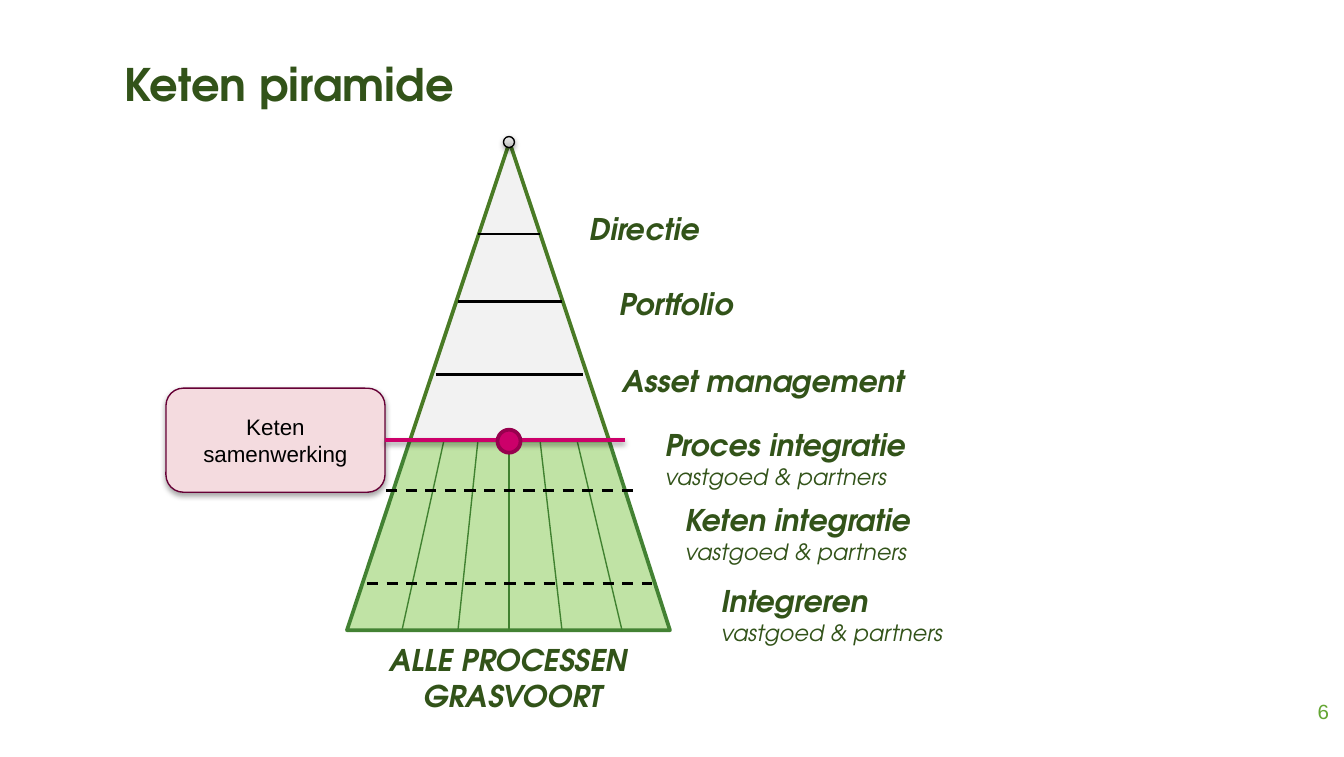
from lxml.etree import SubElement
from pptx import Presentation
from pptx.dml.color import RGBColor
from pptx.enum.dml import MSO_LINE
from pptx.enum.shapes import MSO_CONNECTOR, MSO_SHAPE
from pptx.enum.text import MSO_ANCHOR, MSO_AUTO_SIZE, PP_ALIGN
from pptx.oxml.ns import qn
from pptx.util import Inches, Pt

EMU_PER_PX = 914400 / 134.4
HEADING_FONT = "TeX Gyre Adventor"
BODY_FONT = "Arial"

BLACK = RGBColor(0x00, 0x00, 0x00)
DARK_GREEN = RGBColor(0x32, 0x53, 0x19)
NUMBER_GREEN = RGBColor(0x64, 0xA6, 0x33)
BASE_FILL = RGBColor(0xC0, 0xE3, 0xA5)
BASE_LINE = RGBColor(0x43, 0x82, 0x33)
TOP_FILL = RGBColor(0xF2, 0xF2, 0xF2)
TOP_LINE = RGBColor(0x4A, 0x7B, 0x26)
RIB_GREEN = RGBColor(0x40, 0x81, 0x30)
PINK = RGBColor(0xCC, 0x00, 0x6A)
DARK_PINK = RGBColor(0x97, 0x00, 0x4E)
CALLOUT_FILL = RGBColor(0xF4, 0xDB, 0xDF)
CALLOUT_LINE = RGBColor(0x66, 0x00, 0x35)
GREY_START = RGBColor(0xBD, 0xBD, 0xBD)
GREY_END = RGBColor(0xEE, 0xEE, 0xEE)

CENTER_X = 509
APEX_Y = 142
SPLIT_Y = 440
BASE_Y = 630

LEVELS = [
    ("Directie", None, 576, 204, 391, 46),
    ("Portfolio", None, 606, 279, 368, 46),
    ("Asset management", None, 609, 356, 347, 46),
    ("Proces integratie", "vastgoed & partners", 652, 420, 316, 70),
    ("Keten integratie", "vastgoed & partners", 672, 495, 282, 70),
    ("Integreren", "vastgoed & partners", 708, 576, 265, 77),
]
RIBS = [(402, 444), (458, 478), (CENTER_X, CENTER_X), (562, 540), (622, 577)]
SOLID_DIVIDERS = [(478, 540, 234), (458, 562, 301), (436, 583, 374)]
DASHED_DIVIDERS = [(386, 640, 490), (367, 652, 583)]


def px(value):
    return round(value * EMU_PER_PX)


def set_effects(shape, shadow_opacity=0):
    properties = shape.element.spPr
    effects = properties.find(qn("a:effectLst"))
    if effects is None:
        effects = SubElement(properties, qn("a:effectLst"))
    if shadow_opacity:
        shadow = SubElement(effects, qn("a:outerShdw"), blurRad=str(Pt(3.1)),
                            dist=str(Pt(1.6)), dir="5400000", rotWithShape="0")
        color = SubElement(shadow, qn("a:srgbClr"), val="000000")
        SubElement(color, qn("a:alpha"), val=str(shadow_opacity * 1000))


def style_shape(shape, fill, line, width, shadow_opacity=0):
    shape.shadow.inherit = False
    if fill is not None:
        shape.fill.solid()
        shape.fill.fore_color.rgb = fill
    shape.line.color.rgb = line
    shape.line.width = Pt(width)
    set_effects(shape, shadow_opacity)


def add_figure(slide, kind, left, top, width, height, fill, line, line_width,
               shadow_opacity=0):
    shape = slide.shapes.add_shape(kind, px(left), px(top), px(width), px(height))
    style_shape(shape, fill, line, line_width, shadow_opacity)
    return shape


def add_circle(slide, center_y, diameter, fill, line, line_width, shadow_opacity=0):
    radius = diameter / 2
    return add_figure(slide, MSO_SHAPE.OVAL, CENTER_X - radius, center_y - radius,
                      diameter, diameter, fill, line, line_width, shadow_opacity)


def add_line(slide, start, end, color, width, dashed=False, shadow_opacity=0):
    connector = slide.shapes.add_connector(
        MSO_CONNECTOR.STRAIGHT, *(px(value) for value in (*start, *end)))
    connector.line.color.rgb = color
    connector.line.width = Pt(width)
    if dashed:
        connector.line.dash_style = MSO_LINE.DASH
    set_effects(connector, shadow_opacity)
    return connector


def write_line(paragraph, text, size, font, color, bold=False, italic=False,
               alignment=PP_ALIGN.LEFT):
    paragraph.alignment = alignment
    run = paragraph.add_run()
    run.text = text
    run.font.size = Pt(size)
    run.font.name = font
    run.font.color.rgb = color
    run.font.bold = bold
    run.font.italic = italic


def add_text_frame(slide, left, top, width, height):
    text_frame = slide.shapes.add_textbox(
        px(left), px(top), px(width), px(height)).text_frame
    text_frame.word_wrap = True
    return text_frame


def add_title(slide):
    title = slide.shapes.title
    title.left, title.top, title.width, title.height = map(px, (-60, 50, 698, 67))
    title.text_frame.auto_size = MSO_AUTO_SIZE.NONE
    write_line(title.text_frame.paragraphs[0], "Keten piramide", 24, HEADING_FONT,
               DARK_GREEN, bold=True, alignment=PP_ALIGN.CENTER)


def add_level_label(slide, name, detail, left, top, width, height):
    text_frame = add_text_frame(slide, left, top, width, height)
    write_line(text_frame.paragraphs[0], name, 16, HEADING_FONT, DARK_GREEN,
               bold=True, italic=True)
    if detail:
        write_line(text_frame.add_paragraph(), detail, 12, HEADING_FONT, DARK_GREEN,
                   italic=True)


def write_centered_lines(text_frame, lines, **style):
    for index, line in enumerate(lines):
        paragraph = text_frame.add_paragraph() if index else text_frame.paragraphs[0]
        write_line(paragraph, line, alignment=PP_ALIGN.CENTER, **style)


def add_pyramid(slide):
    builder = slide.shapes.build_freeform(347, BASE_Y, scale=EMU_PER_PX)
    builder.add_line_segments([(410, SPLIT_Y), (609, SPLIT_Y), (670, BASE_Y)], close=True)
    style_shape(builder.convert_to_shape(), BASE_FILL, BASE_LINE, 2)
    add_figure(slide, MSO_SHAPE.ISOSCELES_TRIANGLE, 410, APEX_Y, 199, SPLIT_Y - APEX_Y,
               TOP_FILL, TOP_LINE, 2)
    for bottom_x, top_x in RIBS:
        add_line(slide, (bottom_x, BASE_Y), (top_x, SPLIT_Y), RIB_GREEN, 0.75)


def add_dividers(slide):
    for dividers, dashed in ((SOLID_DIVIDERS, False), (DASHED_DIVIDERS, True)):
        for left, right, y in dividers:
            add_line(slide, (left, y), (right, y), BLACK, 1.5, dashed)


def add_apex(slide):
    apex = add_circle(slide, APEX_Y, 11, None, BLACK, 0.75, 38)
    apex.fill.gradient()
    for stop, color in zip(apex.fill.gradient_stops, (GREY_START, GREY_END)):
        stop.color.rgb = color


def add_callout(slide):
    callout = add_figure(slide, MSO_SHAPE.ROUNDED_RECTANGLE, 166, SPLIT_Y - 52, 219, 104,
                         CALLOUT_FILL, CALLOUT_LINE, 0.75, 35)
    callout.text_frame.vertical_anchor = MSO_ANCHOR.MIDDLE
    write_centered_lines(callout.text_frame, ["Keten", "samenwerking"],
                         size=12, font=BODY_FONT, color=BLACK)
    connector = add_line(slide, (385, SPLIT_Y), (625, SPLIT_Y), PINK, 2.25,
                         shadow_opacity=38)
    connector.begin_connect(callout, 3)
    add_circle(slide, SPLIT_Y + 1, 23, PINK, DARK_PINK, 2)


def add_slide_number(slide):
    text_frame = add_text_frame(slide, 1240, 695, 89, 28)
    text_frame.margin_left = text_frame.margin_right = 0
    text_frame.margin_top = text_frame.margin_bottom = 0
    text_frame.vertical_anchor = MSO_ANCHOR.BOTTOM
    write_line(text_frame.paragraphs[0], "6", 11, BODY_FONT, NUMBER_GREEN,
               alignment=PP_ALIGN.RIGHT)


def main():
    presentation = Presentation()
    presentation.slide_width = Inches(10)
    presentation.slide_height = Inches(5.63)
    slide = presentation.slides.add_slide(presentation.slide_layouts[5])
    add_title(slide)
    add_slide_number(slide)
    for level in LEVELS:
        add_level_label(slide, *level)
    write_centered_lines(add_text_frame(slide, 372, 635, 282, 79),
                         ["ALLE PROCESSEN ", "GRASVOORT"], size=16, font=HEADING_FONT,
                         color=DARK_GREEN, bold=True, italic=True)
    add_pyramid(slide)
    add_dividers(slide)
    add_apex(slide)
    add_callout(slide)
    presentation.save("out.pptx")


if __name__ == "__main__":
    main()
